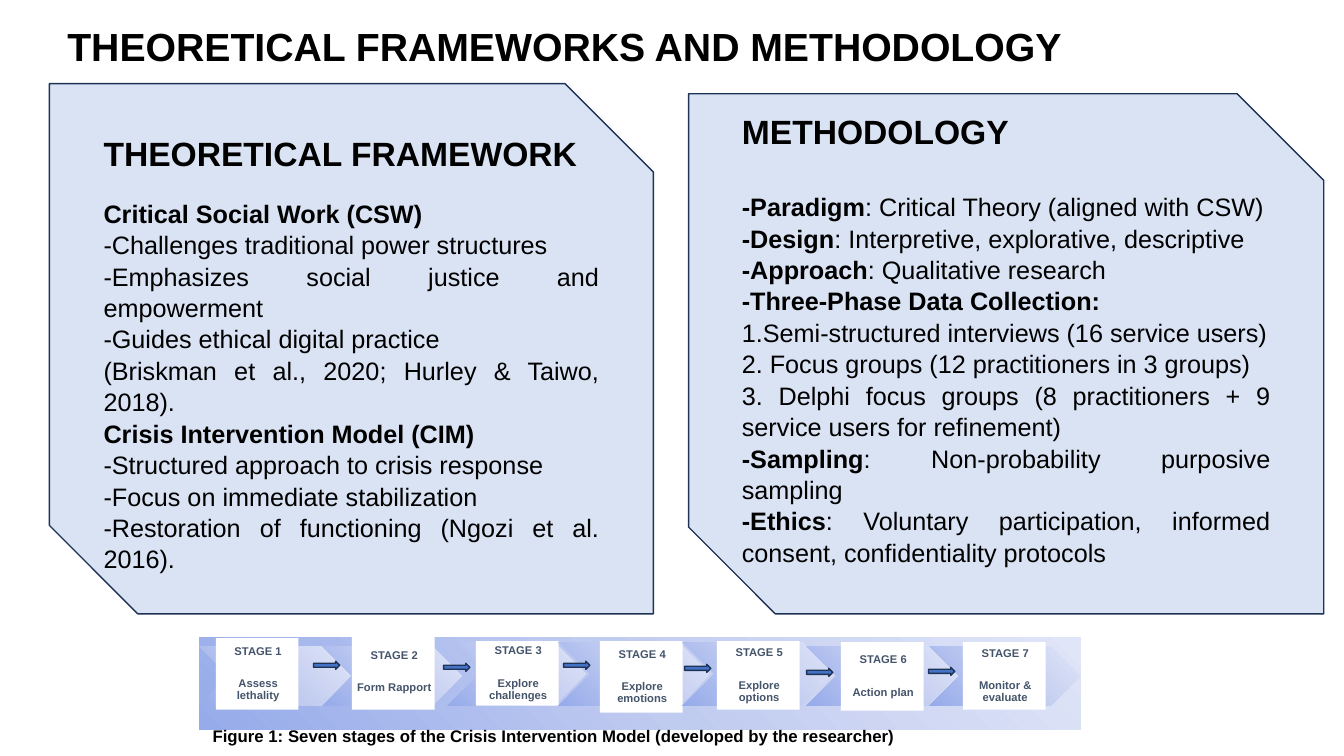
from dataclasses import dataclass

from pptx import Presentation
from pptx.dml.color import RGBColor as Rgb
from pptx.enum.shapes import MSO_SHAPE as Preset
from pptx.enum.text import MSO_ANCHOR as Anchor, MSO_AUTO_SIZE as AutoSize, PP_ALIGN as Align
from pptx.oxml import parse_xml
from pptx.oxml.ns import nsdecls
from pptx.shapes.autoshape import Shape
from pptx.shapes.shapetree import GroupShapes, SlideShapes
from pptx.text.text import _Paragraph as Paragraph
from pptx.util import Inches, Pt


@dataclass(frozen=True)
class Theme:
    font: str = "Arial"
    ink: str = "000000"
    panel: str = "DAE3F3"
    outline: str = "1E3256"
    arrow: str = "4472C4"
    card: str = "FFFFFF"
    stage_ink: str = "44546A"
    gradient: tuple[str, ...] = ("96ABEA", "C0CBF0", "E0E5F7")
    title_size: float = 28
    heading_size: float = 24
    body_size: float = 18
    caption_size: float = 12
    stage_size: float = 8


@dataclass(frozen=True)
class Place:
    left: float
    top: float
    width: float
    height: float


@dataclass(frozen=True)
class Line:
    strong: str = ""
    plain: str = ""


@dataclass(frozen=True)
class Panel:
    place: Place
    heading: str
    heading_gap: float
    inset_top: float
    inset_bottom: float
    lines: tuple[Line, ...]


@dataclass(frozen=True)
class Stage:
    label: str
    chevron: Place
    card_left: float
    card_top: float
    card_height: float


THEME = Theme()
CARD_WIDTH = 0.82

PANELS = (
    Panel(Place(0.49, 0.83, 5.99, 5.26), "THEORETICAL FRAMEWORK", 17, 0.14, 0.05, (
        Line("Critical Social Work (CSW) "),
        Line(plain="-Challenges traditional power structures"),
        Line(plain="-Emphasizes social justice and empowerment"),
        Line(plain="-Guides ethical digital practice"),
        Line(plain="(Briskman et al., 2020; Hurley & Taiwo, 2018)."),
        Line("Crisis Intervention Model (CIM) "),
        Line(plain="-Structured approach to crisis response"),
        Line(plain="-Focus on immediate stabilization"),
        Line(plain="-Restoration of functioning (Ngozi et al. 2016)."),
    )),
    Panel(Place(6.83, 0.93, 6.3, 5.16), "METHODOLOGY", 28, 0.05, 0.34, (
        Line("-Paradigm", ": Critical Theory (aligned with CSW)"),
        Line("-Design", ": Interpretive, explorative, descriptive"),
        Line("-Approach", ": Qualitative research"),
        Line("-Three-Phase Data Collection: "),
        Line(plain="1.Semi-structured interviews (16 service users)"),
        Line(plain="2. Focus groups (12 practitioners in 3 groups)"),
        Line(plain="3. Delphi focus groups (8 practitioners + 9 service users for refinement)"),
        Line("-Sampling", ": Non-probability purposive sampling"),
        Line("-Ethics", ": Voluntary participation, informed consent, confidentiality protocols"),
    )),
)

STAGES = (
    Stage("Assess lethality", Place(1.98, 6.41, 1.5, 0.59), 2.14, 6.33, 0.71),
    Stage("Form Rapport", Place(3.21, 6.41, 1.37, 0.59), 3.49, 6.29, 0.75),
    Stage("Explore challenges", Place(4.44, 6.37, 1.37, 0.63), 4.72, 6.36, 0.64),
    Stage("Explore emotions", Place(5.54, 6.37, 1.5, 0.63), 5.95, 6.36, 0.71),
    Stage("Explore options", Place(6.77, 6.37, 1.5, 0.63), 7.11, 6.36, 0.68),
    Stage("Action plan", Place(8, 6.41, 1.5, 0.59), 8.34, 6.37, 0.68),
    Stage("Monitor & evaluate", Place(9.22, 6.41, 1.5, 0.59), 9.55, 6.37, 0.67),
)

ARROWS = ((3.11, 6.56), (4.4, 6.58), (5.59, 6.56), (6.79, 6.59), (8, 6.63), (9.21, 6.62))


def bounds(place: Place) -> tuple[int, ...]:
    return tuple(Inches(side) for side in (place.left, place.top, place.width, place.height))


def style(para: Paragraph, size: float, color: str = THEME.ink, bold: bool | None = True) -> None:
    para.font.name = THEME.font
    para.font.size = Pt(size)
    para.font.color.rgb = Rgb.from_string(color)
    para.font.bold = bold


def draw_shape(shapes: SlideShapes | GroupShapes, preset: Preset, place: Place,
               fill: str | None = None, outline: str | None = None) -> Shape:
    """Draw a preset shape; without a fill colour it takes the theme gradient."""
    shape = shapes.add_shape(preset, *bounds(place))
    if fill:
        shape.fill.solid()
        shape.fill.fore_color.rgb = Rgb.from_string(fill)
    else:
        stops = "".join(f'<a:gs pos="{index * 50000}"><a:srgbClr val="{color}"/></a:gs>'
                        for index, color in enumerate(THEME.gradient))
        shape.element.spPr.append(parse_xml(
            f'<a:gradFill {nsdecls("a")} rotWithShape="1"><a:gsLst>{stops}</a:gsLst>'
            '<a:path path="circle"><a:fillToRect t="100000" r="100000"/></a:path></a:gradFill>'))
    if outline:
        shape.line.color.rgb = Rgb.from_string(outline)
        shape.line.width = Pt(1)
    else:
        shape.line.fill.background()
    shape.shadow.inherit = False
    return shape


def draw_text(shapes: SlideShapes, place: Place, text: str, size: float) -> None:
    frame = shapes.add_textbox(*bounds(place)).text_frame
    frame.word_wrap = True
    frame.auto_size = AutoSize.SHAPE_TO_FIT_TEXT
    frame.paragraphs[0].text = text
    style(frame.paragraphs[0], size)


def draw_panel(shapes: SlideShapes, panel: Panel) -> None:
    box = draw_shape(shapes, Preset.SNIP_2_DIAG_RECTANGLE, panel.place, THEME.panel, THEME.outline)
    frame = box.text_frame
    frame.vertical_anchor = Anchor.MIDDLE
    frame.margin_top, frame.margin_bottom = Inches(panel.inset_top), Inches(panel.inset_bottom)
    heading = frame.paragraphs[0]
    heading.text = panel.heading
    heading.alignment = Align.LEFT
    heading.space_after = Pt(panel.heading_gap)
    style(heading, THEME.heading_size)
    for line in panel.lines:
        para = frame.add_paragraph()
        para.alignment = Align.JUSTIFY
        para.line_spacing = 1.04
        mixed = bool(line.strong and line.plain)
        style(para, THEME.body_size, bold=None if mixed else bool(line.strong))
        for text, bold in ((line.strong, True), (line.plain, False)):
            if text:
                span = para.add_run()
                span.text = text
                if mixed:
                    span.font.bold = bold


def draw_stage(shapes: GroupShapes, number: int, stage: Stage) -> None:
    draw_shape(shapes, Preset.CHEVRON, stage.chevron)
    place = Place(stage.card_left, stage.card_top, CARD_WIDTH, stage.card_height)
    frame = draw_shape(shapes, Preset.RECTANGLE, place, THEME.card).text_frame
    frame.vertical_anchor = Anchor.MIDDLE
    frame.margin_left = Inches(0.03)
    frame.margin_top = frame.margin_right = frame.margin_bottom = Inches(0.01)
    name, label = frame.paragraphs[0], frame.add_paragraph()
    name.text, label.text = f"STAGE {number}", stage.label
    label.space_before = Pt(2.8)
    for para in (name, label):
        para.alignment = Align.CENTER
        para.line_spacing = 0.89
        para.space_after = Pt(12)
        style(para, THEME.stage_size, THEME.stage_ink)


def main() -> None:
    deck = Presentation()
    deck.slide_width, deck.slide_height = Inches(13.33), Inches(7.5)
    page = deck.slides.add_slide(deck.slide_layouts[6])

    # Title and the two text panels
    draw_text(page.shapes, Place(0.57, 0.17, 10.74, 0.57),
              "THEORETICAL FRAMEWORKS AND METHODOLOGY", THEME.title_size)
    for panel in PANELS:
        draw_panel(page.shapes, panel)

    # Seven-stage flow on its band
    flow = page.shapes.add_group_shape().shapes
    draw_shape(flow, Preset.RECTANGLE, Place(1.98, 6.32, 8.74, 0.92))
    for number, stage in enumerate(STAGES, start=1):
        draw_stage(flow, number, stage)

    # Arrows between stages
    for left, top in ARROWS:
        draw_shape(page.shapes, Preset.RIGHT_ARROW, Place(left, top, 0.26, 0.08),
                   THEME.arrow, THEME.outline)

    # Figure caption
    draw_text(page.shapes, Place(2.01, 7.15, 7.7, 0.5),
              "Figure 1: Seven stages of the Crisis Intervention Model (developed by the researcher)",
              THEME.caption_size)
    deck.save("out.pptx")


if __name__ == "__main__":
    main()
